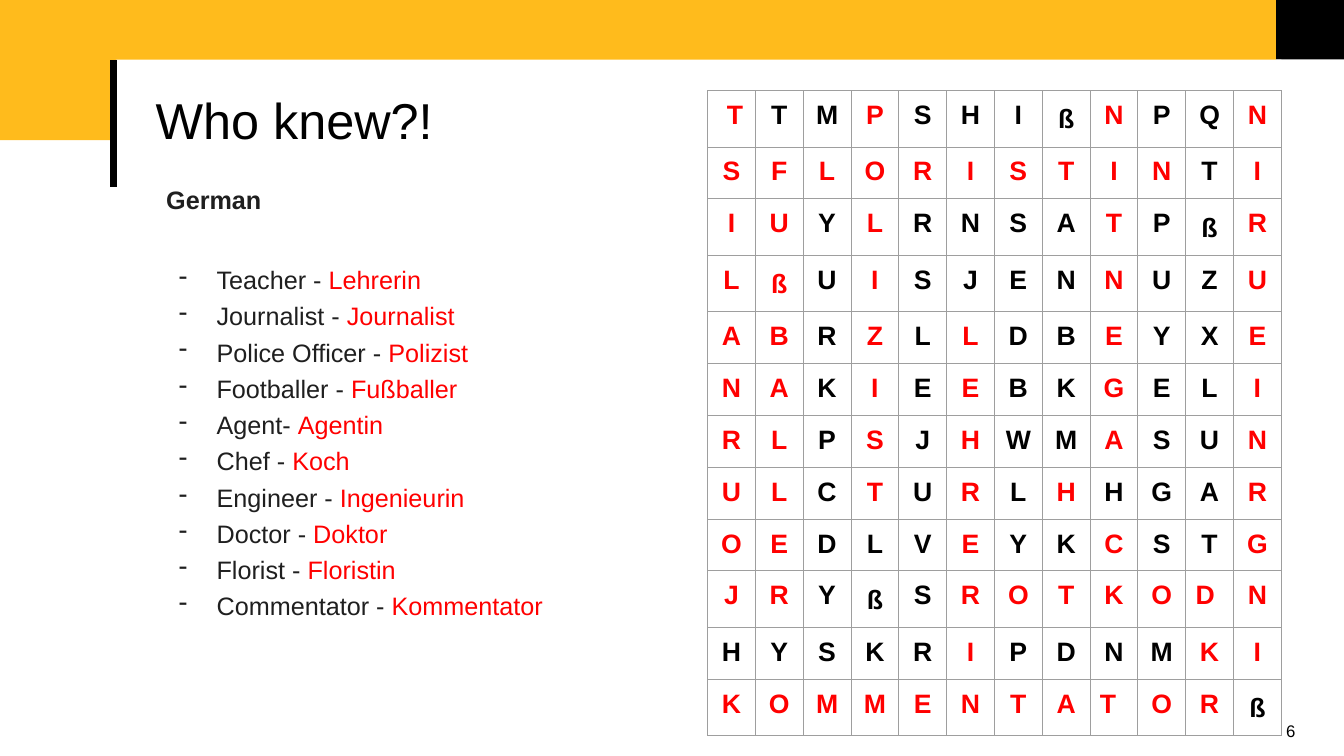
from lxml import etree
from pptx import Presentation
from pptx.dml.color import RGBColor
from pptx.enum.shapes import MSO_CONNECTOR, MSO_SHAPE
from pptx.enum.text import MSO_ANCHOR, PP_ALIGN
from pptx.oxml.ns import qn
from pptx.util import Cm, Pt

RECTANGLE = MSO_SHAPE.RECTANGLE
STRAIGHT = MSO_CONNECTOR.STRAIGHT
MIDDLE = MSO_ANCHOR.MIDDLE
LEFT, CENTER = PP_ALIGN.LEFT, PP_ALIGN.CENTER

YELLOW = RGBColor(0xFF, 0xBB, 0x1C)
BLACK = RGBColor(0, 0, 0)
WHITE = RGBColor(0xFF, 0xFF, 0xFF)
RED = RGBColor(0xFF, 0, 0)
INK = RGBColor(0x1F, 0x1F, 0x1F)
GRID_GREY = RGBColor(0x9E, 0x9E, 0x9E)
FONT = "Arial"

# label, German word, first row and column in the grid, step down, step right
JOBS = [
    ("Teacher - ", "Lehrerin", 4, 5, 1, 0),
    ("Journalist - ", "Journalist", 9, 0, -1, 0),
    ("Police Officer - ", "Polizist", 0, 3, 1, 0),
    ("Footballer - ", "Fußballer", 1, 1, 1, 0),
    ("Agent- ", "Agentin", 6, 8, -1, 0),
    ("Chef - ", "Koch", 10, 10, -1, -1),
    ("Engineer - ", "Ingenieurin", 10, 11, -1, 0),
    ("Doctor - ", "Doktor", 9, 10, 0, -1),
    ("Florist - ", "Floristin", 1, 1, 0, 1),
    ("Commentator - ", "Kommentator", 11, 0, 0, 1),
]
LETTERS = [
    "TTMPSHIßNPQN",
    "SFLORISTINTI",
    "IUYLRNSATPßR",
    "LßUISJENNUZU",
    "ABRZLLDBEYXE",
    "NAKIEEBKGELI",
    "RLPSJHWMASUN",
    "ULCTURLHHGAR",
    "OEDLVEYKCSTG",
    "JRYßSROTKODN",
    "HYSKRIPDNMKI",
    "KOMMENTATORß",
]
LEFT_ALIGNED = {(9, 10), (11, 8)}
CELL = Cm(1.2)


def style(run, size, color, bold=False):
    run.font.name = FONT
    run.font.size = Pt(size)
    run.font.bold = bold
    run.font.color.rgb = color


prs = Presentation()
prs.slide_width, prs.slide_height = Cm(33.87), Cm(19.05)
s = prs.slides.add_slide(prs.slide_layouts[5])

# Header bands and accent line
for left, width, height, color in [(0, 32.16, 3.53, YELLOW), (32.16, 1.71, 1.5, BLACK)]:
    band = s.shapes.add_shape(RECTANGLE, Cm(left), 0, Cm(width), Cm(height))
    band.shadow.inherit = False
    band.fill.solid()
    band.fill.fore_color.rgb = color
    band.line.fill.background()

# Title panel, placed above the bands
title = s.shapes.title
s.shapes._spTree.append(title._element)
title.left, title.top, title.width, title.height = Cm(2.92), Cm(1.5), Cm(29.37), Cm(3.2)
title.fill.solid()
title.fill.fore_color.rgb = WHITE
tf = title.text_frame
tf.text = "Who knew?!"
tf.vertical_anchor = MIDDLE
tf.margin_left = Cm(1)
p = tf.paragraphs[0]
p.alignment = LEFT
p.line_spacing = 0.9
style(p.runs[0], 36, BLACK)

accent = s.shapes.add_connector(STRAIGHT, Cm(2.85), Cm(1.5), Cm(2.85), Cm(4.72))
accent.line.color.rgb = BLACK
accent.line.width = Pt(5)
etree.SubElement(accent._element.spPr, qn("a:effectLst"))

# Slide number
tf = s.shapes.add_textbox(Cm(32.16), Cm(18.03), Cm(1.04), Cm(1.02)).text_frame
tf.word_wrap = True
tf.text = "6"
style(tf.paragraphs[0].runs[0], 12, BLACK)

# Word search
found = {
    (row + i * down, col + i * right)
    for _, word, row, col, down, right in JOBS
    for i in range(len(word))
}
size = len(LETTERS)
frame = s.shapes.add_table(size, size, Cm(17.83), Cm(2.28), Cm(14.46), CELL * size)
table = frame.table
table.first_row = table.horz_banding = False
for column in table.columns:
    column.width = Cm(14.46 / size)
for row, line in enumerate(LETTERS):
    for col, letter in enumerate(line):
        cell = table.cell(row, col)
        cell.margin_left = cell.margin_right = Cm(0.25)
        cell.margin_top = cell.margin_bottom = Cm(0.25)
        cell.text = letter
        p = cell.text_frame.paragraphs[0]
        p.alignment = LEFT if (row, col) in LEFT_ALIGNED else CENTER
        if letter == "ß":
            p.line_spacing = 1.15
        style(p.runs[0], 19, RED if (row, col) in found else BLACK, True)
        tcPr = cell._tc.get_or_add_tcPr()
        for side in ("a:lnL", "a:lnR", "a:lnT", "a:lnB"):
            border = etree.SubElement(tcPr, qn(side), w=str(Pt(0.75)))
            fill = etree.SubElement(border, qn("a:solidFill"))
            etree.SubElement(fill, qn("a:srgbClr"), val=str(GRID_GREY))
        cell.fill.background()
table.cell(0, 0).margin_left = Cm(0.43)

# Vocabulary list
tf = s.shapes.add_textbox(Cm(3.94), Cm(4.29), Cm(11.43), Cm(13)).text_frame
tf.word_wrap = True
tf.margin_left = tf.margin_right = tf.margin_top = tf.margin_bottom = Cm(0.25)
tf.text = "German"
tf.paragraphs[0].line_spacing = 1.15
style(tf.paragraphs[0].runs[0], 18, INK, True)
for i, (label, word, *_) in enumerate(JOBS):
    p = tf.add_paragraph()
    p.line_spacing = 1.2
    p.space_before = Pt(0 if i else 31)
    pPr = p._p.get_or_add_pPr()
    pPr.set("marL", str(Cm(1.27)))
    pPr.set("indent", str(-Cm(0.95)))
    bullet_color = etree.SubElement(pPr, qn("a:buClr"))
    etree.SubElement(bullet_color, qn("a:srgbClr"), val=str(INK))
    etree.SubElement(pPr, qn("a:buChar"), char="-")
    for text, color in [(label, INK), (word, RED)]:
        r = p.add_run()
        r.text = text
        style(r, 18, color)

prs.save("out.pptx")
